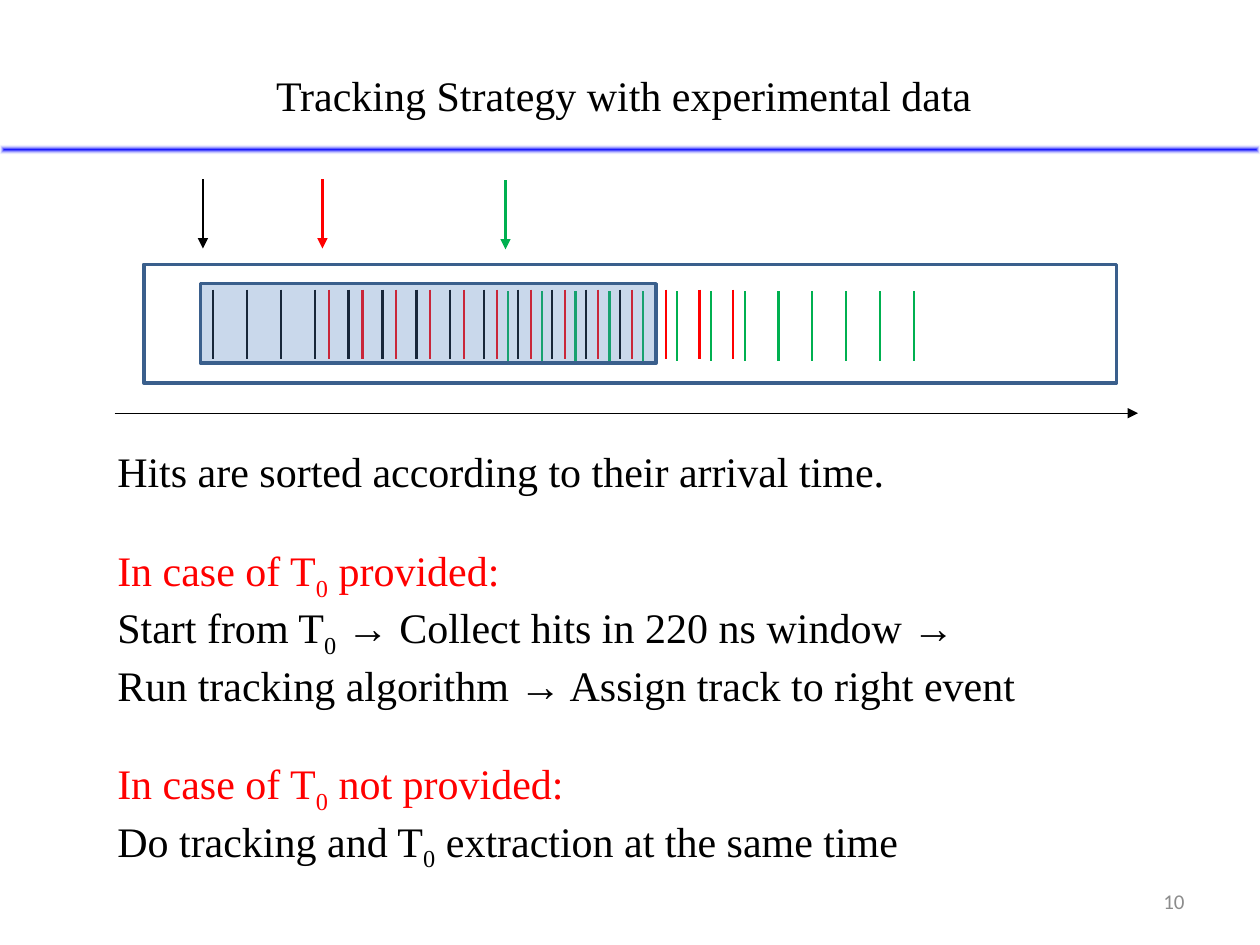
from dataclasses import dataclass

import lxml.etree
import pptx
import pptx.dml.color
import pptx.enum.shapes
import pptx.enum.text
import pptx.oxml
import pptx.oxml.ns
import pptx.util

Cm = pptx.util.Cm
Pt = pptx.util.Pt
qn = pptx.oxml.ns.qn
Alignment = pptx.enum.text.PP_ALIGN
Anchor = pptx.enum.text.MSO_ANCHOR


@dataclass(frozen=True)
class Theme:
    black: str = "000000"
    red: str = "FF0000"
    green: str = "00B050"
    frame: str = "3A5F8C"
    window: str = "4F81BD"
    rule: str = "0000FF"
    rule_edge: str = "FFFFFF"
    muted: str = "8C8C8C"
    serif: str = "Times New Roman"
    sans: str = "Calibri"
    text_size: float = 24
    number_size: float = 12
    axis_width: float = 0.75
    hit_width: float = 1.25
    frame_width: float = 2
    blank_line: float = 27.6


@dataclass(frozen=True)
class Box:
    left: float
    top: float
    width: float
    height: float

    def lengths(self) -> tuple:
        return Cm(self.left), Cm(self.top), Cm(self.width), Cm(self.height)


@dataclass(frozen=True)
class Event:
    """One event: its start-time arrow and the span of its hits, in cm."""
    color: str
    arrow_x: float
    arrow_top: float
    first_hit: float
    last_hit: float
    hit_top: float


@dataclass(frozen=True)
class Line:
    text: str
    color: str
    space_before: float = 0


THEME = Theme()
HIT_COUNT = 13
MARK_LENGTH = 1.4
TIMELINE = Box(2.9, 5.33, 19.61, 2.39)
TIME_WINDOW = Box(4.04, 5.72, 9.19, 1.6)
EVENTS = [
    Event(THEME.black, 4.09, 3.61, 4.29, 12.5, 5.84),
    Event(THEME.red, 6.5, 3.61, 6.63, 14.78, 5.84),
    Event(THEME.green, 10.19, 3.63, 10.24, 18.42, 5.87),
]
# An underscore marks the next character as a subscript.
LINES = [
    Line("Hits are sorted according to their arrival time.", THEME.black),
    Line("In case of T_0 provided:", THEME.red, THEME.blank_line),
    Line("Start from T_0 → Collect hits in 220 ns window →", THEME.black),
    Line("Run tracking algorithm → Assign track to right event", THEME.black),
    Line("In case of T_0 not provided:", THEME.red, THEME.blank_line),
    Line("Do tracking and T_0 extraction at the same time", THEME.black),
]


def rgb(color: str) -> pptx.dml.color.RGBColor:
    return pptx.dml.color.RGBColor.from_string(color)


def place(shape, box: Box, wrap: bool = True, anchor=Anchor.TOP) -> None:
    shape.left, shape.top, shape.width, shape.height = box.lengths()
    shape.text_frame.auto_size = pptx.enum.text.MSO_AUTO_SIZE.NONE
    shape.text_frame.word_wrap = wrap
    shape.text_frame.vertical_anchor = anchor


def write(text_frame, text: str, *, color: str = THEME.black, font: str = THEME.serif,
          size: float = THEME.text_size, align=Alignment.LEFT, space_before: float = 0) -> None:
    """Fill the first empty paragraph, or add one, with unbulleted text."""
    paragraph = text_frame.paragraphs[-1]
    if paragraph.runs:
        paragraph = text_frame.add_paragraph()
    paragraph.alignment = align
    paragraph.space_before = Pt(space_before)
    properties = paragraph._p.get_or_add_pPr()
    properties.set("marL", "0")
    properties.set("indent", "0")
    lxml.etree.SubElement(properties, qn("a:buNone"))
    before, _, after = text.partition("_")
    for part, baseline in ((before, 0), (after[:1], -25000), (after[1:], 0)):
        if part:
            run = paragraph.add_run()
            run.text = part
            run.font.name = font
            run.font.size = Pt(size)
            run.font.color.rgb = rgb(color)
            if baseline:
                run.font._element.set("baseline", str(baseline))


def add_rectangle(slide, box: Box):
    shape = slide.shapes.add_shape(pptx.enum.shapes.MSO_SHAPE.RECTANGLE, *box.lengths())
    shape.shadow.inherit = False
    shape.fill.background()
    shape.line.fill.background()
    return shape


def add_frame(slide, box: Box):
    shape = add_rectangle(slide, box)
    shape.line.color.rgb = rgb(THEME.frame)
    shape.line.width = Pt(THEME.frame_width)
    return shape


def add_line(shapes, start: tuple[float, float], end: tuple[float, float], color: str,
             width: float, arrow: bool = False) -> None:
    connector = shapes.add_connector(pptx.enum.shapes.MSO_CONNECTOR.STRAIGHT,
                                     *(Cm(value) for value in start + end))
    connector.line.color.rgb = rgb(color)
    connector.line.width = Pt(width)
    if arrow:
        lxml.etree.SubElement(connector.line._get_or_add_ln(), qn("a:tailEnd"), type="triangle")
    lxml.etree.SubElement(connector._element.spPr, qn("a:effectLst"))


def add_title_rule(slide) -> None:
    """Draw the rule below the title, fading from its centre to clear edges."""
    shape = add_rectangle(slide, Box(0, 2.92, 25.4, 0.2))
    gradient = pptx.oxml.parse_xml(
        f'<a:gradFill {pptx.oxml.ns.nsdecls("a")} rotWithShape="1"><a:gsLst>'
        f'<a:gs pos="0"><a:srgbClr val="{THEME.rule}"/></a:gs>'
        f'<a:gs pos="100000"><a:srgbClr val="{THEME.rule_edge}"><a:alpha val="0"/></a:srgbClr></a:gs>'
        '</a:gsLst><a:path path="shape"><a:fillToRect l="50000" t="50000" r="50000" b="50000"/>'
        '</a:path></a:gradFill>')
    properties = shape._element.spPr
    properties.replace(properties.find(qn("a:noFill")), gradient)


def add_hits(slide, event: Event) -> None:
    group = slide.shapes.add_group_shape()
    pitch = (event.last_hit - event.first_hit) / (HIT_COUNT - 1)
    for index in range(HIT_COUNT):
        x = event.first_hit + index * pitch
        add_line(group.shapes, (x, event.hit_top), (x, event.hit_top + MARK_LENGTH),
                 event.color, THEME.hit_width)


def add_time_window(slide) -> None:
    shape = add_frame(slide, TIME_WINDOW)
    shape.fill.solid()
    shape.fill.fore_color.rgb = rgb(THEME.window)
    color = shape._element.spPr.find(qn("a:solidFill")).find(qn("a:srgbClr"))
    lxml.etree.SubElement(color, qn("a:alpha"), val="30000")


def main() -> None:
    presentation = pptx.Presentation()
    presentation.slide_width, presentation.slide_height = Cm(25.4), Cm(19.05)
    slide = presentation.slides.add_slide(presentation.slide_layouts[1])

    title, body = slide.placeholders
    place(title, Box(5.31, 1.27, 14.66, 1.27), wrap=False)
    write(title.text_frame, "Tracking Strategy with experimental data")
    place(body, Box(2.11, 8.86, 21.79, 8.46))
    for line in LINES:
        write(body.text_frame, line.text, color=line.color, space_before=line.space_before)
    number_box = Box(18.21, 17.65, 5.92, 1.02)
    number = slide.shapes.add_textbox(*number_box.lengths())
    place(number, number_box, anchor=Anchor.MIDDLE)
    write(number.text_frame, "10", color=THEME.muted, font=THEME.sans,
          size=THEME.number_size, align=Alignment.RIGHT)

    add_title_rule(slide)
    add_line(slide.shapes, (2.31, 8.33), (22.94, 8.33), THEME.black, THEME.axis_width, arrow=True)
    add_frame(slide, TIMELINE)
    for event in EVENTS:
        add_hits(slide, event)
    for event in EVENTS:
        add_line(slide.shapes, (event.arrow_x, event.arrow_top),
                 (event.arrow_x, event.arrow_top + MARK_LENGTH),
                 event.color, THEME.hit_width, arrow=True)
    add_time_window(slide)
    presentation.save("out.pptx")


if __name__ == "__main__":
    main()
